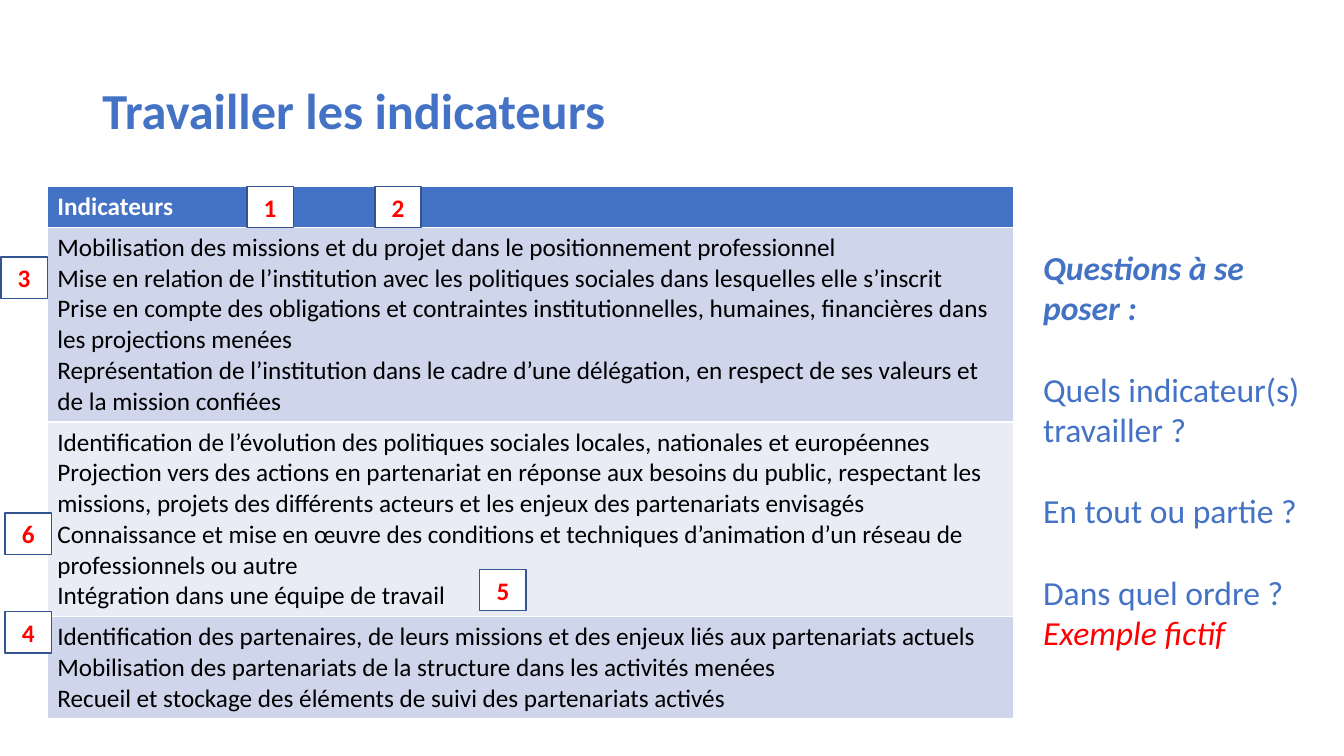
from collections import namedtuple
from dataclasses import dataclass

from pptx import Presentation
from pptx.dml.color import RGBColor as RGB
from pptx.enum.shapes import MSO_SHAPE as Shape
from pptx.enum.text import MSO_ANCHOR as Anchor, MSO_AUTO_SIZE as AutoSize, PP_ALIGN as Align
from pptx.util import Pt

Box = namedtuple("Box", "left top width height")


@dataclass(frozen=True)
class Theme:
    font: str = "Calibri"
    blue: str = "4472C4"
    outline: str = "325491"
    red: str = "FF0000"
    white: str = "FFFFFF"
    black: str = "000000"
    bands: tuple = ("CFD5EA", "E9EBF5")
    title_size: float = 36
    question_size: float = 24
    body_size: float = 18


THEME = Theme()

INDICATOR_GROUPS = [
    [
        "Mobilisation des missions et du projet dans le positionnement professionnel",
        "Mise en relation de l’institution avec les politiques sociales dans lesquelles elle s’inscrit",
        "Prise en compte des obligations et contraintes institutionnelles, humaines, "
        "financières dans les projections menées",
        "Représentation de l’institution dans le cadre d’une délégation, en respect de ses "
        "valeurs et de la mission confiées",
    ],
    [
        "Identification de l’évolution des politiques sociales locales, nationales et européennes",
        "Projection vers des actions en partenariat en réponse aux besoins du public, respectant "
        "les missions, projets des différents acteurs et les enjeux des partenariats envisagés",
        "Connaissance et mise en œuvre des conditions et techniques d’animation d’un réseau de "
        "professionnels ou autre",
        "Intégration dans une équipe de travail",
    ],
    [
        "Identification des partenaires, de leurs missions et des enjeux liés aux partenariats actuels",
        "Mobilisation des partenariats de la structure dans les activités menées",
        "Recueil et stockage des éléments de suivi des partenariats activés",
    ],
]
GROUP_LINES = [6, 6, 3]

# Badge number: offset from the table's top left corner
BADGES = {
    1: (142.6, 0),
    2: (234, 0),
    3: (-33.1, 50.4),
    4: (-30.2, 303.8),
    5: (308.9, 273.6),
    6: (-30.2, 233.3),
}


def points(box):
    return [Pt(length) for length in box]


def add_span(para, text, size, color, bold=False, italic=False):
    span = para.add_run()
    span.text = text
    font = span.font
    font.name, font.size = THEME.font, Pt(size)
    font.bold, font.italic = bold, italic
    font.color.rgb = RGB.from_string(color)


def add_paras(frame, texts, size, color, bold=False):
    for index, text in enumerate(texts):
        para = frame.add_paragraph() if index else frame.paragraphs[0]
        add_span(para, text, size, color, bold)


def fill_with(target, color):
    target.fill.solid()
    target.fill.fore_color.rgb = RGB.from_string(color)


def set_title(page, box):
    title = page.shapes.title
    title.left, title.top, title.width, title.height = points(box)
    frame = title.text_frame
    frame.vertical_anchor = Anchor.MIDDLE
    para = frame.paragraphs[0]
    para.alignment = Align.LEFT
    para.line_spacing = 0.9
    add_span(para, "Travailler les indicateurs", THEME.title_size, THEME.blue, bold=True)


def add_indicators(page, box):
    rows = len(INDICATOR_GROUPS) + 1
    table = page.shapes.add_table(rows, 1, *points(box)).table
    for row, lines in zip(table.rows, [1, *GROUP_LINES]):
        row.height = Pt(lines * THEME.body_size * 1.2 + 7.2)
    header = table.cell(0, 0)
    fill_with(header, THEME.blue)
    add_paras(header.text_frame, ["Indicateurs"], THEME.body_size, THEME.white, bold=True)
    for index, group in enumerate(INDICATOR_GROUPS):
        cell = table.cell(index + 1, 0)
        fill_with(cell, THEME.bands[index % 2])
        add_paras(cell.text_frame, group, THEME.body_size, THEME.black)


def add_questions(page, box):
    frame = page.shapes.add_textbox(*points(box)).text_frame
    frame.word_wrap = True
    frame.auto_size = AutoSize.SHAPE_TO_FIT_TEXT
    size = THEME.question_size
    add_span(frame.paragraphs[0], "Questions à se poser :", size, THEME.blue, bold=True, italic=True)
    for question in ("Quels indicateur(s) travailler ?", "En tout ou partie ?", "Dans quel ordre ?"):
        para = frame.add_paragraph()
        para.space_before = Pt(29.3)
        add_span(para, question, size, THEME.blue)
    add_span(frame.add_paragraph(), "Exemple fictif", size, THEME.red, italic=True)


def add_badge(page, box, number):
    badge = page.shapes.add_shape(Shape.RECTANGLE, *points(box))
    badge.shadow.inherit = False
    fill_with(badge, THEME.white)
    badge.line.color.rgb = RGB.from_string(THEME.outline)
    badge.line.width = Pt(1)
    frame = badge.text_frame
    frame.vertical_anchor = Anchor.MIDDLE
    para = frame.paragraphs[0]
    para.alignment = Align.CENTER
    add_span(para, str(number), THEME.body_size, THEME.red, bold=True)


def add_indicator_slide(deck):
    page = deck.slides.add_slide(deck.slide_layouts[5])
    table_box = Box(33.8, 133.2, 690.5, 374.4)
    set_title(page, Box(66, 28.8, 828, 104.4))
    add_indicators(page, table_box)
    add_questions(page, Box(738, 172.8, 197.3, 298))
    for number, (right, down) in BADGES.items():
        add_badge(page, Box(table_box.left + right, table_box.top + down, 33.1, 29.5), number)


def main():
    deck = Presentation()
    deck.slide_width, deck.slide_height = Pt(960), Pt(540)
    add_indicator_slide(deck)
    deck.save("out.pptx")


if __name__ == "__main__":
    main()
